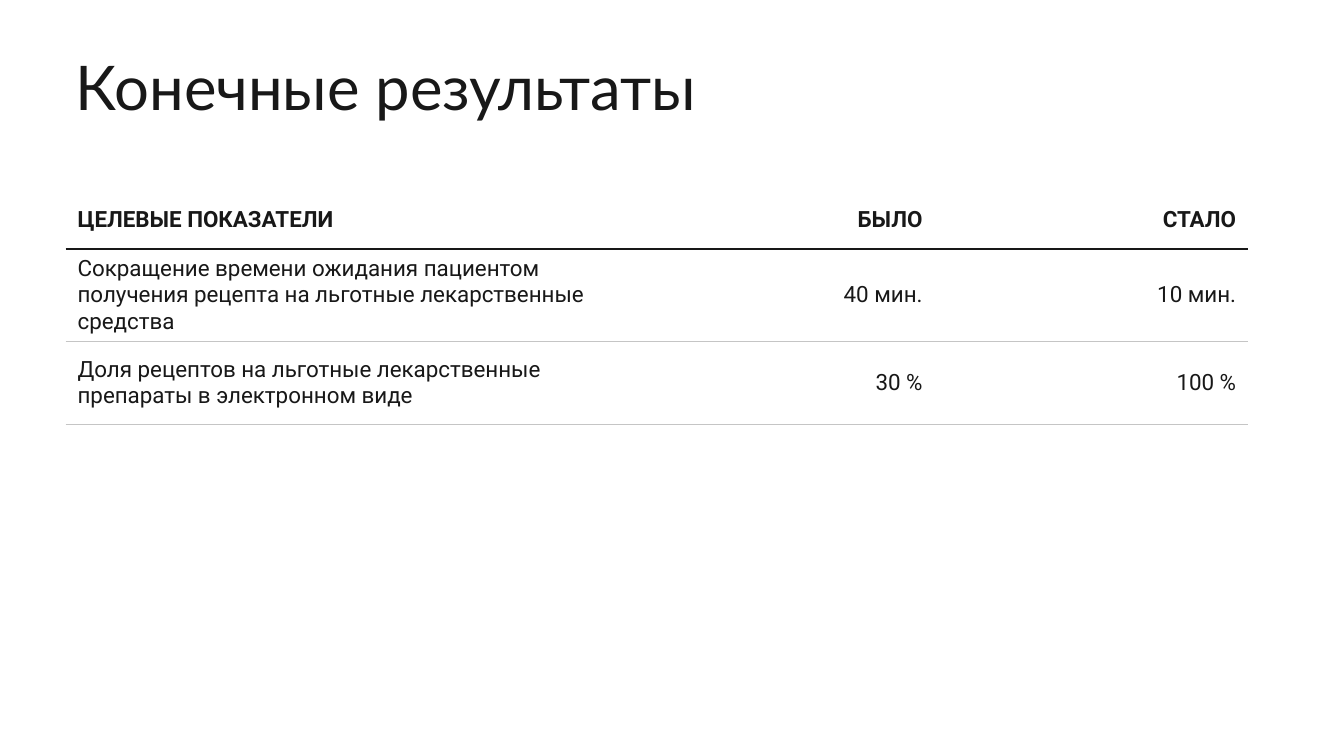
"""Build a slide with a title and a before/after table of target indicators."""
from lxml import etree
from pptx import Presentation, util as u
from pptx.dml.color import RGBColor
from pptx.enum import text as t
from pptx.oxml.ns import qn

TITLE = "Конечные результаты"
ROWS = [
    ("ЦЕЛЕВЫЕ ПОКАЗАТЕЛИ", "БЫЛО", "СТАЛО"),
    ("Сокращение времени ожидания пациентом получения рецепта "
     "на льготные лекарственные средства", "40 мин.", "10 мин."),
    ("Доля рецептов на льготные лекарственные препараты "
     "в электронном виде", "30 %", "100 %"),
]
HUES = {"ink": "181818", "rule": "C5C5C5"}
WIDE, HIGH = 13.33, 7.5
LEFT = 0.65
COLS = (5.51, 3.11, 3.11)
TALL = (0.58, 0.82, 0.82)
PAD = {"margin_left": 0.12, "margin_right": 0.12,
       "margin_top": 0.06, "margin_bottom": 0.06}
HEAD = {"name": "Lato", "size": u.Pt(44), "bold": False}
BODY = {"name": "Roboto", "size": u.Pt(16)}


def style(font, form):
    for key, val in form.items():
        setattr(font, key, val)
    font.color.rgb = RGBColor.from_string(HUES["ink"])


def edge(cell, side, hue, size):
    props = cell._tc.get_or_add_tcPr()
    line = etree.SubElement(props, qn("a:" + side), w=str(u.Pt(size)))
    if hue is None:
        etree.SubElement(line, qn("a:noFill"))
        return
    fill = etree.SubElement(line, qn("a:solidFill"))
    etree.SubElement(fill, qn("a:srgbClr"), val=HUES[hue])


def rule(row):
    return (None, 0) if row < 0 else ("ink", 1.5) if row == 0 else ("rule", 1)


def add_title(slide):
    box = slide.shapes.add_textbox(
        *map(u.Inches, (LEFT, 0.52, WIDE - LEFT, 0.79)))
    box.text_frame.word_wrap = True
    para = box.text_frame.paragraphs[0]
    para.text, para.line_spacing = TITLE, 0.9
    style(para.runs[0].font, HEAD)


def add_grid(slide):
    grid = slide.shapes.add_table(
        len(ROWS), len(COLS),
        *map(u.Inches, (LEFT, 1.89, sum(COLS), sum(TALL)))).table
    grid.horz_banding = False
    for col, wide in zip(grid.columns, COLS):
        col.width = u.Inches(wide)
    for row, tall in zip(grid.rows, TALL):
        row.height = u.Inches(tall)
    for r, line in enumerate(ROWS):
        for c, word in enumerate(line):
            cell = grid.cell(r, c)
            for key, val in PAD.items():
                setattr(cell, key, u.Inches(val))
            cell.vertical_anchor = t.MSO_ANCHOR.MIDDLE
            para = cell.text_frame.paragraphs[0]
            para.text = word
            para.alignment = t.PP_ALIGN.RIGHT if c else t.PP_ALIGN.LEFT
            style(para.runs[0].font, {**BODY, "bold": r == 0})
            edge(cell, "lnL", None, 0)
            edge(cell, "lnR", None, 0)
            edge(cell, "lnT", *rule(r - 1))
            edge(cell, "lnB", *rule(r))
            cell.fill.background()


def main():
    deck = Presentation()
    deck.slide_width, deck.slide_height = u.Inches(WIDE), u.Inches(HIGH)
    slide = deck.slides.add_slide(deck.slide_layouts[6])
    add_title(slide)
    add_grid(slide)
    deck.save("out.pptx")


if __name__ == "__main__":
    main()
